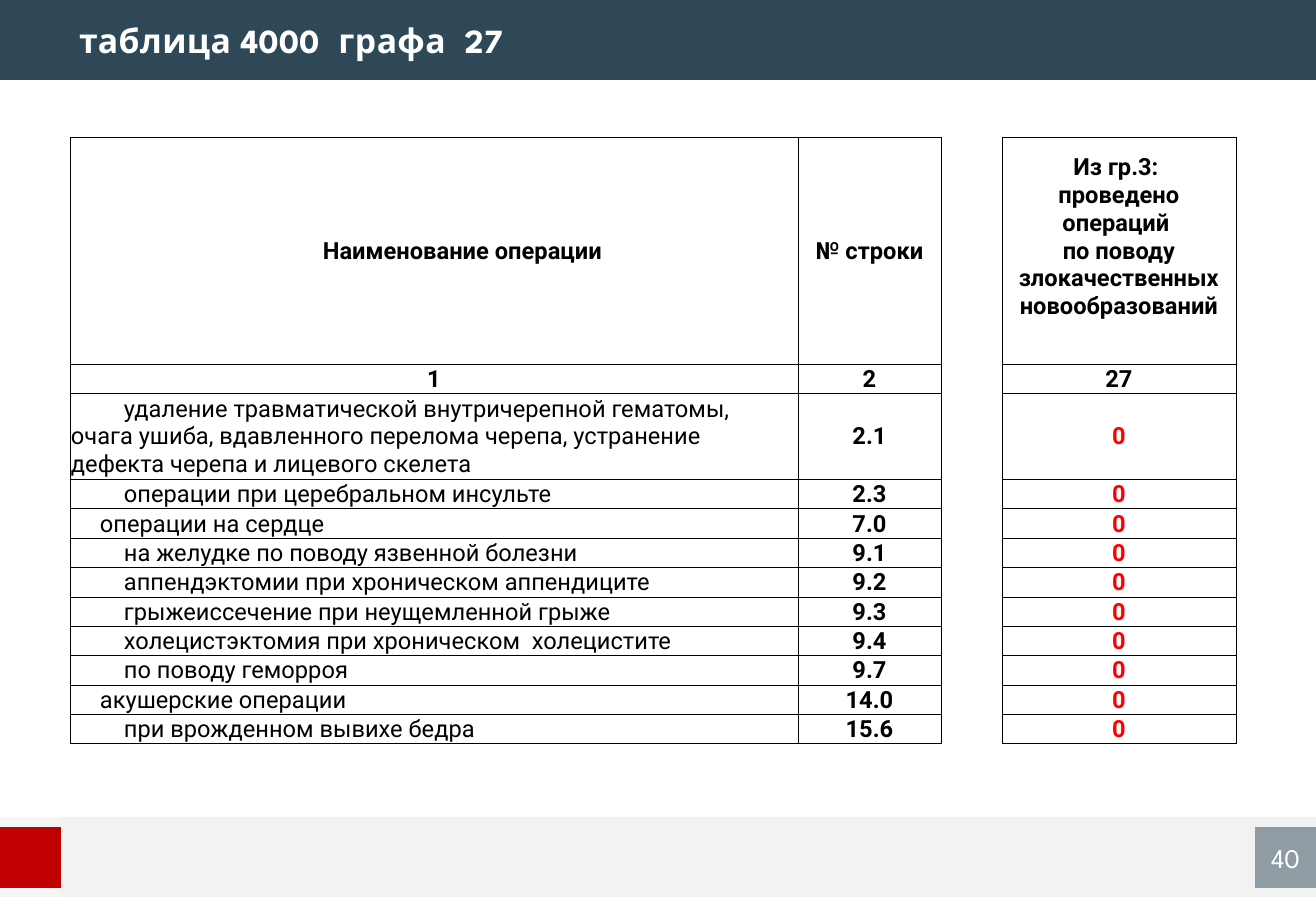
from pptx import Presentation
from pptx.dml.color import RGBColor
from pptx.enum.shapes import MSO_SHAPE
from pptx.enum.text import MSO_ANCHOR, PP_ALIGN
from pptx.oxml.ns import qn
from pptx.util import Pt
from lxml import etree

RECTANGLE = MSO_SHAPE.RECTANGLE
MIDDLE = MSO_ANCHOR.MIDDLE
LEFT, CENTER = PP_ALIGN.LEFT, PP_ALIGN.CENTER

TITLE = "таблица 4000  графа  27"
PAGE_NUMBER = "40"
HEADERS = (
    "Наименование операции",
    "№ строки",
    "Из гр.3: \vпроведено операций \vпо поводу злокачественных новообразований",
)
COLUMN_NUMBERS = ("1", "2", "27")
OPERATIONS = [
    (2, "удаление травматической внутричерепной гематомы, очага ушиба, "
        "вдавленного перелома черепа, устранение дефекта черепа и лицевого скелета", "2.1", "0"),
    (2, "операции при церебральном инсульте", "2.3", "0"),
    (1, "операции на сердце", "7.0", "0"),
    (2, "на желудке по поводу язвенной болезни", "9.1", "0"),
    (2, "аппендэктомии при хроническом аппендиците", "9.2", "0"),
    (2, "грыжеиссечение при неущемленной грыже", "9.3", "0"),
    (2, "холецистэктомия при хроническом  холецистите", "9.4", "0"),
    (2, "по поводу геморроя", "9.7", "0"),
    (1, "акушерские операции", "14.0", "0"),
    (2, "при врожденном вывихе бедра", "15.6", "0"),
]
COLORS = {
    "navy": "2F4858", "footer": "F2F2F2", "white": "FFFFFF",
    "red": "C00000", "zero": "FF0000", "black": "000000",
}
TITLE_FONT, TABLE_FONT = "League Spartan", "Roboto"

SCALE = 914400 / 121.5
SLIDE_WIDTH, SLIDE_HEIGHT = 1316, 911
BAR_HEIGHT, FOOTER_TOP = 80, 817
SQUARE = 61
SQUARE_TOP = FOOTER_TOP + 10
TITLE_LEFT, TITLE_WIDTH = 79, 1163
TABLE_LEFT, TABLE_TOP = 70, 137
COLUMN_WIDTHS = (728, 143, 61, 234)
GAP_COLUMN = 2
ROW_HEIGHTS = [227, 29, 85] + [29] * (len(OPERATIONS) - 1)
LEVEL_INDENTS = {1: 29, 2: 53}
HEADER_SHIFT, HEADER_BOTTOM = 58, 28


def px(value):
    return round(value * SCALE)


def color(name):
    return RGBColor.from_string(COLORS[name])


def add_block(slide, left, top, width, height, fill, opacity=100):
    shape = slide.shapes.add_shape(RECTANGLE, px(left), px(top), px(width), px(height))
    shape.shadow.inherit = False
    shape.line.fill.background()
    shape.fill.solid()
    shape.fill.fore_color.rgb = color(fill)
    if opacity < 100:
        fill_color = shape.fill._xPr.find(f"{qn('a:solidFill')}/{qn('a:srgbClr')}")
        etree.SubElement(fill_color, qn("a:alpha"), val=str(opacity * 1000))
    return shape


def write(paragraph, text, font_name, size, font_color, bold, alignment):
    paragraph.text = text
    paragraph.alignment = alignment
    for run in paragraph.runs:
        run.font.name = font_name
        run.font.size = Pt(size)
        run.font.bold = bold
        run.font.color.rgb = color(font_color)


def set_borders(cell, visible_sides):
    properties = cell._tc.get_or_add_tcPr()
    for side in "LRTB":
        line = etree.SubElement(properties, qn(f"a:ln{side}"), w=str(Pt(0.5)))
        if side in visible_sides:
            fill = etree.SubElement(line, qn("a:solidFill"))
            etree.SubElement(fill, qn("a:srgbClr"), val=COLORS["black"])
        else:
            etree.SubElement(line, qn("a:noFill"))


def fill_cell(cell, text, bold=True, font_color="black", alignment=CENTER, indent=0):
    set_borders(cell, "LRTB" if text else "LR")
    cell.fill.background()
    cell.vertical_anchor = MIDDLE
    cell.margin_left = cell.margin_right = cell.margin_top = px(1)
    cell.margin_bottom = 0
    paragraph = cell.text_frame.paragraphs[0]
    write(paragraph, text, TABLE_FONT, 14, font_color, bold, alignment)
    if indent:
        paragraph._p.get_or_add_pPr().set("indent", str(px(indent)))
    if not text:
        etree.SubElement(paragraph._p, qn("a:endParaRPr"), sz="1400")


def add_operations_table(slide):
    frame = slide.shapes.add_table(
        len(ROW_HEIGHTS), len(COLUMN_WIDTHS), px(TABLE_LEFT), px(TABLE_TOP),
        px(sum(COLUMN_WIDTHS)), px(sum(ROW_HEIGHTS)))
    table = frame.table
    table.first_row = table.horz_banding = False
    for column, width in zip(table.columns, COLUMN_WIDTHS):
        column.width = px(width)
    for row, height in zip(table.rows, ROW_HEIGHTS):
        row.height = px(height)
        fill_cell(row.cells[GAP_COLUMN], "")

    for row_index, labels in enumerate((HEADERS, COLUMN_NUMBERS)):
        for column_index, label in zip((0, 1, 3), labels):
            fill_cell(table.cell(row_index, column_index), label)
    table.cell(0, 0).margin_left = px(HEADER_SHIFT)
    table.cell(0, 3).margin_bottom = px(HEADER_BOTTOM)

    for row_index, (level, name, number, count) in enumerate(OPERATIONS, start=2):
        fill_cell(table.cell(row_index, 0), name, bold=False, alignment=LEFT,
                  indent=LEVEL_INDENTS[level])
        fill_cell(table.cell(row_index, 1), number)
        fill_cell(table.cell(row_index, 3), count, font_color="zero")


def add_title(slide):
    text_frame = slide.shapes.add_textbox(
        px(TITLE_LEFT), 0, px(TITLE_WIDTH), px(BAR_HEIGHT)).text_frame
    text_frame.word_wrap = True
    text_frame.vertical_anchor = MIDDLE
    text_frame.margin_left = text_frame.margin_right = 0
    text_frame.margin_top = text_frame.margin_bottom = 0
    paragraph = text_frame.paragraphs[0]
    write(paragraph, TITLE, TITLE_FONT, 20, "white", True, LEFT)
    paragraph.runs[0].font._element.set("spc", "20")


def main():
    presentation = Presentation()
    presentation.slide_width = px(SLIDE_WIDTH)
    presentation.slide_height = px(SLIDE_HEIGHT)
    slide = presentation.slides.add_slide(presentation.slide_layouts[6])

    add_block(slide, 0, FOOTER_TOP, SLIDE_WIDTH, BAR_HEIGHT, "footer")
    add_block(slide, 0, 0, SLIDE_WIDTH, BAR_HEIGHT, "navy")
    add_block(slide, 0, FOOTER_TOP, SQUARE, BAR_HEIGHT, "white", 30)
    add_block(slide, 0, SQUARE_TOP, SQUARE, SQUARE, "red")
    page_square = add_block(slide, SLIDE_WIDTH - SQUARE, SQUARE_TOP, SQUARE, SQUARE, "navy", 50)
    page_square.text_frame.vertical_anchor = MIDDLE
    write(page_square.text_frame.paragraphs[0], PAGE_NUMBER, TITLE_FONT, 16,
          "white", False, CENTER)

    add_title(slide)
    add_operations_table(slide)
    presentation.save("out.pptx")


if __name__ == "__main__":
    main()
